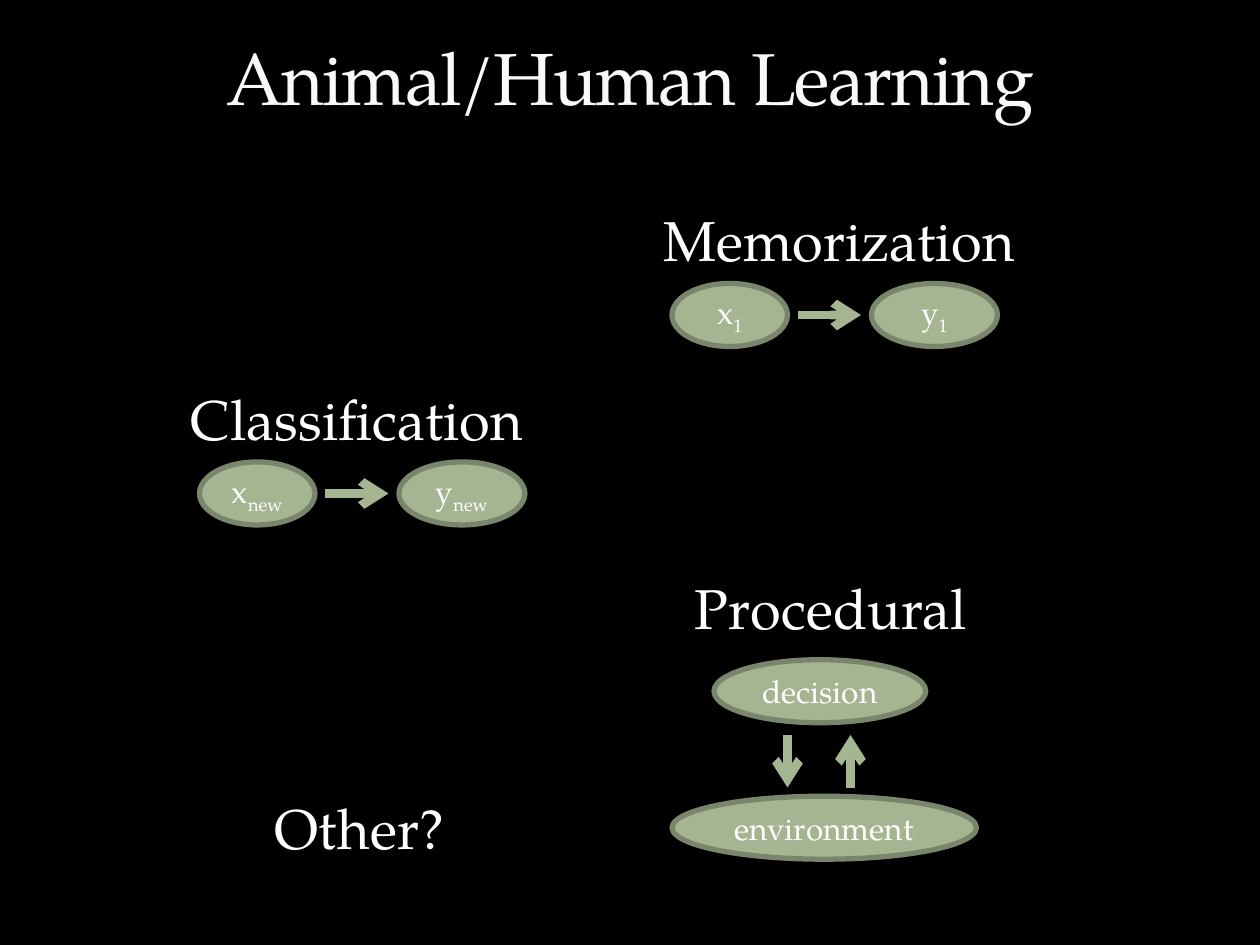
from dataclasses import dataclass

import pptx
import pptx.dml.color
import pptx.enum.shapes
import pptx.enum.text
import pptx.oxml
import pptx.oxml.ns
import pptx.util
from pptx.util import Pt

RGB = pptx.dml.color.RGBColor.from_string


@dataclass(frozen=True)
class Theme:
    font = "TeX Gyre Pagella"
    background = RGB("000000")
    title = RGB("F9F9F9")
    text = RGB("FFFFFF")
    fill = RGB("A5B592")
    line = RGB("7A866C")
    title_size = Pt(42)
    label_size = Pt(32)
    node_size = Pt(18)


theme = Theme()


def write(sp, text, size, color, subscript="", centered=True):
    """Set the one paragraph of a shape, with an optional subscript run."""
    p = sp.text_frame.paragraphs[0]
    if centered:
        p.alignment = pptx.enum.text.PP_ALIGN.CENTER
    p.font.name, p.font.size = theme.font, size
    p.font.color.rgb = color
    p.add_run().text = text
    if subscript:
        r = p.add_run()
        r.text = subscript
        r._r.get_or_add_rPr().set("baseline", "-25000")
    return p


def add_diagram(shapes, label, nodes, arrows):
    """Add a heading, its ellipses and its arrows to a group or slide."""
    text, *box = label
    sp = shapes.add_textbox(*map(Pt, box), Pt(46))
    sp.text_frame.word_wrap = True
    write(sp, text, theme.label_size, theme.text, centered=False)

    for text, subscript, x, y, width in nodes:
        sp = shapes.add_shape(pptx.enum.shapes.MSO_SHAPE.OVAL,
                              Pt(x), Pt(y), Pt(width), Pt(36))
        sp.shadow.inherit = False
        sp.fill.solid()
        sp.fill.fore_color.rgb = theme.fill
        sp.line.color.rgb = theme.line
        sp.line.width = Pt(3)
        tf = sp.text_frame
        tf.word_wrap = False
        tf.vertical_anchor = pptx.enum.text.MSO_ANCHOR.MIDDLE
        write(sp, text, theme.node_size, theme.text, subscript)

    for ends in arrows:
        line = shapes.add_connector(pptx.enum.shapes.MSO_CONNECTOR.STRAIGHT,
                                    *map(Pt, ends))
        line.line.color.rgb = theme.fill
        line.line.width = Pt(5)
        ln = line.line._get_or_add_ln()
        ln.append(pptx.oxml.parse_xml(
            f'<a:tailEnd {pptx.oxml.ns.nsdecls("a")} type="arrow"/>'))
        line._element.spPr.append(pptx.oxml.parse_xml(
            f'<a:effectLst {pptx.oxml.ns.nsdecls("a")}/>'))


prs = pptx.Presentation()
prs.slide_width, prs.slide_height = Pt(720), Pt(540)
s = prs.slides.add_slide(prs.slide_layouts[6])
s.background.fill.solid()
s.background.fill.fore_color.rgb = theme.background

title = s.shapes.add_textbox(Pt(36), Pt(12), Pt(648), Pt(60))
title.text_frame.word_wrap = True
title.text_frame.vertical_anchor = pptx.enum.text.MSO_ANCHOR.BOTTOM
p = write(title, "Animal/Human Learning", theme.title_size, theme.title)
p.runs[0]._r.get_or_add_rPr().set("spc", "-100")

add_diagram(s.shapes, ("Other?", 150, 450, 120), [], [])

for name, subscript, x, y in [("Classification", "new", 102, 216),
                              ("Memorization", "1", 372, 114)]:
    add_diagram(
        s.shapes.add_group_shape().shapes,
        (name, x, y, 228),
        [("x", subscript, x + 12, y + 48, 66),
         ("y", subscript, x + 126, y + 48, 72)],
        [(x + 84, y + 66, x + 120, y + 66)],
    )

add_diagram(
    s.shapes.add_group_shape().shapes,
    ("Procedural", 390, 324, 180),
    [("environment", "", 384, 455, 174), ("decision", "", 408, 377, 121)],
    [(450, 420, 450, 450), (486, 450, 486, 420)],
)

prs.save("out.pptx")
